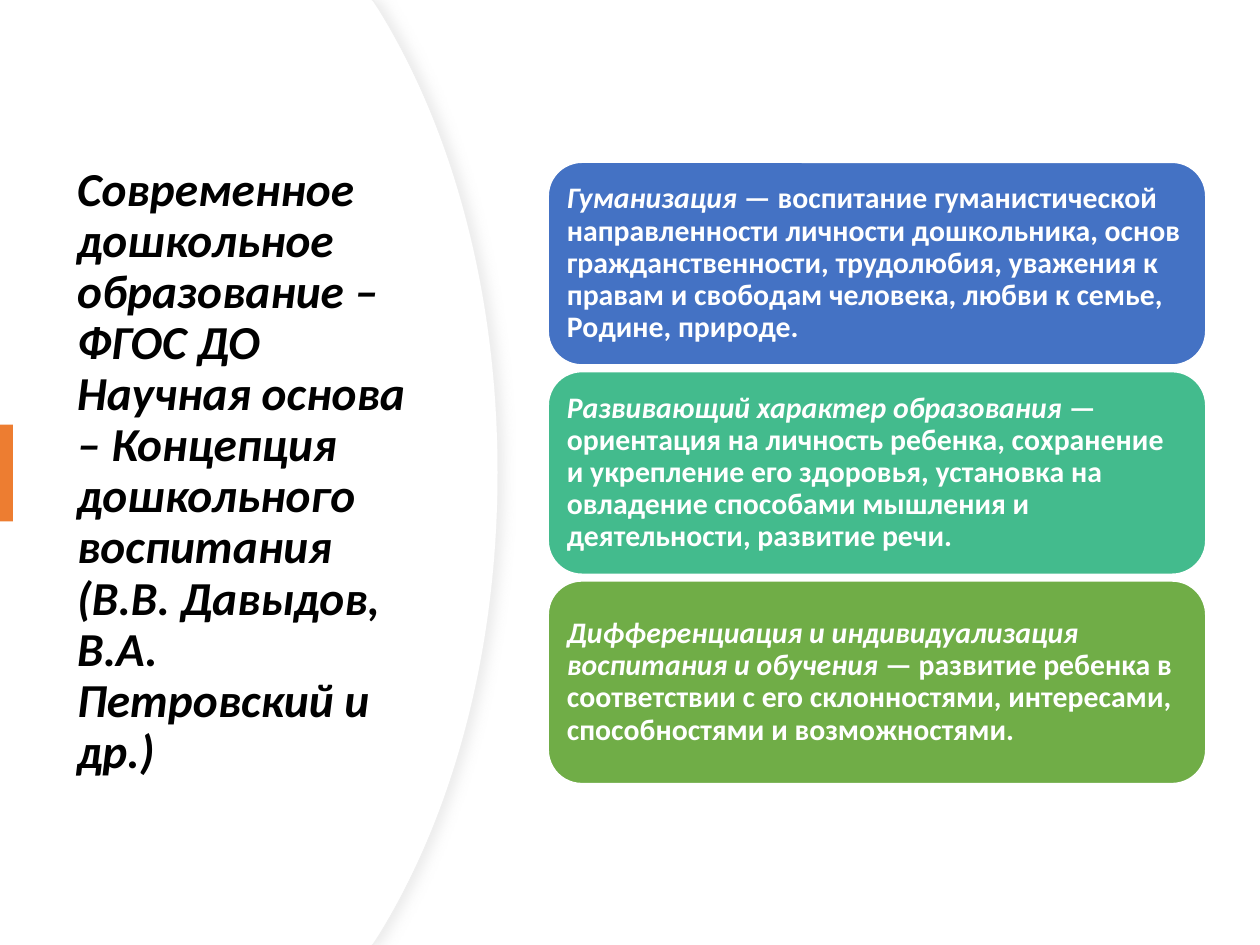
"""Build a slide on the principles of modern preschool education."""
from copy import deepcopy
from lxml import etree
from pptx import Presentation
from pptx import util as u
from pptx.dml.color import RGBColor
from pptx.enum import shapes, text
from pptx.oxml.ns import qn


def paint(fmt, hue):
    fmt.solid()
    fmt.fore_color.rgb = RGBColor.from_string(hue)


def write(para, words, size=17, hue="FFFFFF", slant=False):
    run = para.add_run()
    run.text = words
    font = run.font
    font.name, font.size = "Calibri", u.Pt(size)
    font.bold, font.italic = True, slant
    paint(font.fill, hue)
    para.alignment = text.PP_ALIGN.LEFT
    para.line_spacing = 0.9
    return run


deck = Presentation()
deck.slide_width, deck.slide_height = u.Cm(25.4), u.Cm(19.05)
slide = deck.slides.add_slide(deck.slide_layouts[5])
board = slide.shapes

tall = 19.05
bends = [[(9.12, 2.59), (10.03, 5.89)], [(10.03, tall - 5.89), (9.12, tall - 2.59)]]
for edge, lined in ((7.52, True), (7.49, False)):
    knee = edge + 0.13
    dots = [(edge, 0), (knee, 0.2), (10.03, tall / 2), (knee, tall - 0.2),
            (edge, tall), (0, tall)]
    pen = board.build_freeform(0, 0)
    pen.add_line_segments([(u.Cm(x), u.Cm(y)) for x, y in dots], close=True)
    panel = pen.convert_to_shape()
    sides = list(panel.element.iter(qn("a:lnTo")))
    for side, bend in zip(sides[2:4], bends):
        side.tag = qn("a:cubicBezTo")
        for i, (x, y) in enumerate(bend):
            side.insert(i, etree.Element(qn("a:pt"), x=str(u.Cm(x)), y=str(u.Cm(y))))
    panel.shadow.inherit = False
    paint(panel.fill, "FFFFFF")
    if lined:
        paint(panel.line.fill, "EFEFEF")
        panel.line.width = u.Pt(0.75)
        glow = etree.SubElement(
            panel.element.spPr.find(qn("a:effectLst")), qn("a:outerShdw"),
            blurRad=str(u.Pt(7)), dist=str(u.Pt(3)), dir="0", algn="l", rotWithShape="0")
        tint = etree.SubElement(glow, qn("a:srgbClr"), val="D9D9D9")
        etree.SubElement(tint, qn("a:alpha"), val="50000")
    else:
        panel.line.fill.background()

title = board.title
title.left, title.top, title.width, title.height = map(u.Cm, (1.3, 3.23, 7.52, 12.57))
frame = title.text_frame
frame.word_wrap = True
frame.auto_size = text.MSO_AUTO_SIZE.NONE
frame.vertical_anchor = text.MSO_ANCHOR.MIDDLE
para = frame.paragraphs[0]
look = dict(size=27, hue="000000", slant=True)
head = write(para, "Современное дошкольное образование – ФГОС ДО", **look)
para.add_line_break()
head._r.getnext().append(deepcopy(head.font._rPr))
write(para, "Научная основа – Концепция дошкольного воспитания "
      "(В.В. Давыдов, В.А. Петровский и др.)", **look)
board._spTree.append(title.element)

mark = board.add_shape(shapes.MSO_SHAPE.RECTANGLE, 0, u.Cm(8.56), u.Cm(0.26), u.Cm(1.95))
mark.shadow.inherit = False
paint(mark.fill, "ED7D31")
mark.line.fill.background()

cards = [
    ("4472C4", "Гуманизация",
     " — воспитание гуманистической направленности личности дошкольника, "
     "основ гражданственности, трудолюбия, уважения к правам и свободам "
     "человека, любви к семье, Родине, природе."),
    ("43BB8D", "Развивающий характер образования ",
     "— ориентация на личность ребенка, сохранение и укрепление его здоровья, "
     "установка на овладение способами мышления и деятельности, развитие речи."),
    ("70AD47", "Дифференциация и индивидуализация воспитания и обучения ",
     "— развитие ребенка в соответствии с его склонностями, интересами, "
     "способностями и возможностями."),
]
for row, (hue, term, rest) in enumerate(cards):
    card = board.add_shape(shapes.MSO_SHAPE.ROUNDED_RECTANGLE, u.Cm(11.05),
                           u.Cm(3.27 + 4.22 * row), u.Cm(13.26), u.Cm(4.09))
    card.shadow.inherit = False
    paint(card.fill, hue)
    paint(card.line.fill, "FFFFFF")
    card.line.width = u.Pt(1)
    frame = card.text_frame
    frame.word_wrap = True
    frame.vertical_anchor = text.MSO_ANCHOR.MIDDLE
    frame.margin_left = frame.margin_right = u.Cm(0.18)
    frame.margin_top = frame.margin_bottom = u.Cm(0.18)
    para = frame.paragraphs[0]
    write(para, term, slant=True)
    write(para, rest)

deck.save("out.pptx")
